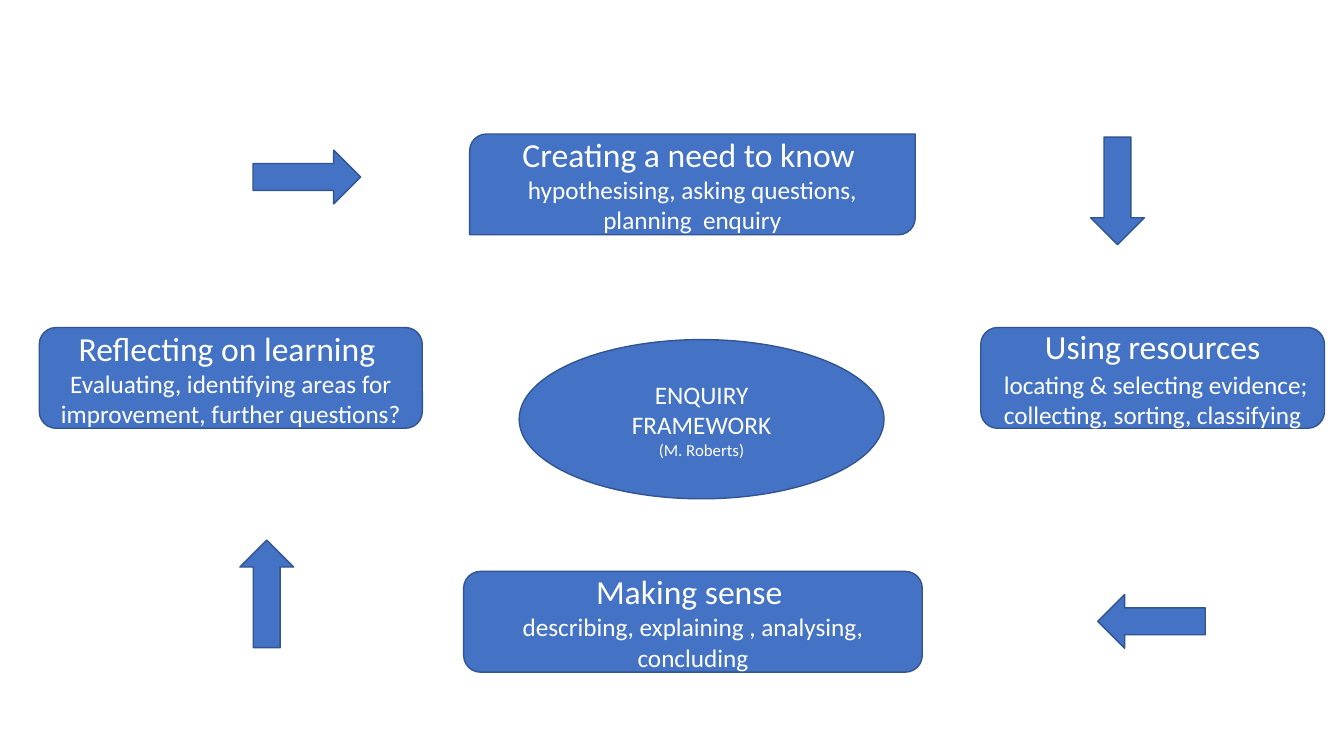
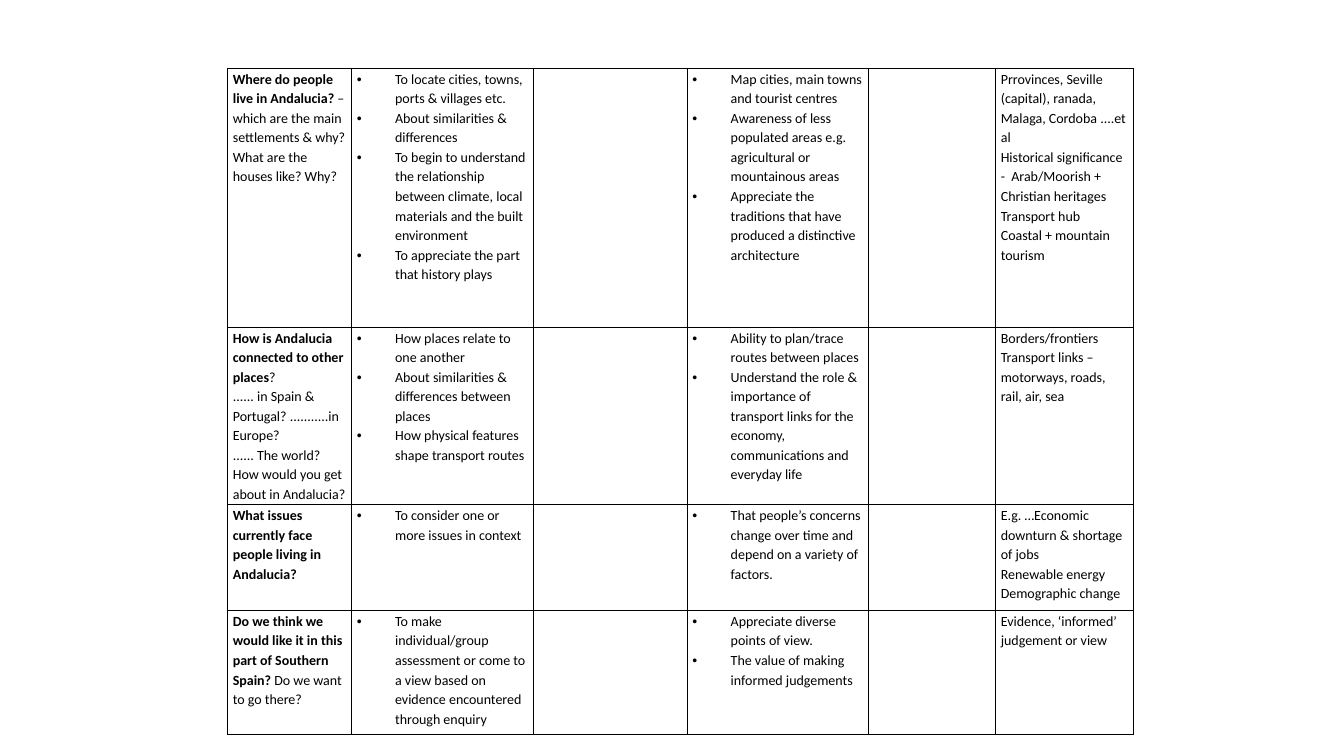
from dataclasses import dataclass
from itertools import product

from lxml.etree import SubElement
from pptx import Presentation
from pptx.dml.color import RGBColor
from pptx.enum.shapes import MSO_SHAPE
from pptx.enum.text import MSO_ANCHOR, PP_ALIGN
from pptx.oxml import parse_xml
from pptx.oxml.ns import nsdecls, qn
from pptx.util import Emu, Inches, Pt

COLOURS = {"fill": "4472C4", "outline": "325491", "light": "FFFFFF", "dark": "000000"}
FONT = "Calibri"
SLIDE_WIDTH, SLIDE_HEIGHT = Inches(13.33), Inches(7.5)
GRID_COLUMNS = 40
CELL = SLIDE_WIDTH / GRID_COLUMNS

BOX_ROWS = 3
ARROW_LENGTH, ARROW_BREADTH = 3.2, 1.6

TABLE_LEFT, TABLE_TOP = 6.78, 2.04
TABLE_COLUMNS = (3.69, 5.4, 4.59, 5.4, 3.78, 4.11)
TABLE_ROWS = (7.71, 5.28, 3.15, 3.69)
QUESTION, LEARNING, OUTCOME, CONTENT = 0, 1, 3, 5
TABLE_TEXT_SIZE = 10
BULLET_INDENT = Inches(0.38)


@dataclass(frozen=True)
class Span:
    text: str
    size: float
    bold: bool = False


Line = tuple[Span, ...]


@dataclass(frozen=True)
class Arrow:
    kind: MSO_SHAPE
    column: float
    row: float
    upright: bool


@dataclass(frozen=True)
class Stage:
    kind: MSO_SHAPE
    column: float
    row: float
    columns: float
    lines: tuple[Line, ...]
    rows: float = BOX_ROWS


@dataclass(frozen=True)
class Enquiry:
    question: str
    question_end: str
    question_more: tuple[str, ...]
    learning: tuple[str, ...]
    outcomes: tuple[str, ...]
    content: tuple[str, ...]


ARROWS = (
    Arrow(MSO_SHAPE.DOWN_ARROW, 32.46, 4.08, True),
    Arrow(MSO_SHAPE.RIGHT_ARROW, 7.53, 4.47, False),
    Arrow(MSO_SHAPE.LEFT_ARROW, 32.67, 17.7, False),
    Arrow(MSO_SHAPE.UP_ARROW, 7.14, 16.08, True),
)

STAGES = (
    Stage(MSO_SHAPE.ROUND_2_DIAG_RECTANGLE, 13.98, 3.99, 13.26, (
        (Span("Creating a need to know ", 24),),
        (Span("hypothesising, asking questions, planning  enquiry", 18),),
    )),
    Stage(MSO_SHAPE.ROUNDED_RECTANGLE, 29.19, 9.75, 10.23, (
        (Span("Using resources", 24),),
        (Span(" ", 20),
         Span("locating & selecting evidence; collecting, sorting, classifying", 18)),
    )),
    Stage(MSO_SHAPE.ROUNDED_RECTANGLE, 1.17, 9.75, 11.4, (
        (Span("Reflecting on learning ", 24),),
        (Span("Evaluating, identifying areas for improvement, further questions?", 18),),
    )),
    Stage(MSO_SHAPE.ROUNDED_RECTANGLE, 13.8, 17.01, 13.65, (
        (Span("Making sense ", 24),),
        (Span("describing, explaining , analysing, concluding", 18),),
    )),
    Stage(MSO_SHAPE.OVAL, 15.45, 10.11, 10.86, (
        (Span("ENQUIRY FRAMEWORK", 18),),
        (Span("(M. Roberts)", 12),),
    ), rows=4.74),
)

ENQUIRIES = (
    Enquiry(
        "Where do people live in Andalucia?",
        " – which are the main settlements & why?",
        ("What are the houses like? Why?",),
        ("To locate cities, towns, ports & villages etc.",
         "About similarities & differences",
         "To begin to understand the relationship between climate, local materials "
         "and the built environment",
         "To appreciate the part that history plays"),
        ("Map cities, main towns and tourist centres",
         "Awareness of less populated areas e.g. agricultural or mountainous areas",
         "Appreciate the traditions that have produced a distinctive architecture"),
        ("Prrovinces, Seville (capital), ranada, Malaga, Cordoba ....et al",
         "Historical significance -  Arab/Moorish + Christian heritages",
         "Transport hub",
         "Coastal + mountain tourism"),
    ),
    Enquiry(
        "How is Andalucia connected to other places",
        "?",
        ("...... in Spain & Portugal? ...........in Europe?",
         "...... The world?",
         "How would you get about in Andalucia?"),
        ("How places relate to one another",
         "About similarities & differences between places",
         "How physical features shape transport routes"),
        ("Ability to plan/trace routes between places",
         "Understand the role & importance of transport links for the economy, "
         "communications and everyday life"),
        ("Borders/frontiers",
         "Transport links – motorways, roads, rail, air, sea"),
    ),
    Enquiry(
        "What issues currently face people living in Andalucia?",
        "",
        (),
        ("To consider one or more issues in context",),
        ("That people’s concerns change over time and depend on a variety of factors.",),
        ("E.g. …Economic downturn & shortage of jobs",
         "Renewable energy",
         "Demographic change"),
    ),
    Enquiry(
        "Do we think we would like it in this part of Southern Spain?",
        " Do we want to go there?",
        (),
        ("To make individual/group assessment or come to a view based on evidence "
         "encountered through enquiry",),
        ("Appreciate diverse points of view.",
         "The value of making informed judgements"),
        ("Evidence, ‘informed’ judgement or view",),
    ),
)


def grid(cells: float) -> Emu:
    """Turn a number of grid cells into a length."""
    return Emu(round(cells * CELL))


def colour(name: str) -> RGBColor:
    return RGBColor.from_string(COLOURS[name])


def write_lines(text_frame, lines: tuple[Line, ...], text_colour: str) -> list:
    """Write one paragraph per line and return the paragraphs."""
    paragraphs = []
    for number, line in enumerate(lines):
        paragraph = text_frame.add_paragraph() if number else text_frame.paragraphs[0]
        for span in line:
            run = paragraph.add_run()
            run.text = span.text
            run.font.name = FONT
            run.font.size = Pt(span.size)
            run.font.bold = span.bold
            run.font.color.rgb = colour(text_colour)
        paragraphs.append(paragraph)
    return paragraphs


def add_figure(page, kind: MSO_SHAPE, column: float, row: float, columns: float, rows: float):
    """Add a shape in the fill and outline that all figures share."""
    figure = page.shapes.add_shape(kind, *map(grid, (column, row, columns, rows)))
    figure.shadow.inherit = False
    figure.fill.solid()
    figure.fill.fore_color.rgb = colour("fill")
    figure.line.color.rgb = colour("outline")
    figure.line.width = Pt(1)
    return figure


def add_arrow(page, arrow: Arrow) -> None:
    size = (ARROW_LENGTH, ARROW_BREADTH)
    columns, rows = reversed(size) if arrow.upright else size
    add_figure(page, arrow.kind, arrow.column, arrow.row, columns, rows)


def add_stage(page, stage: Stage) -> None:
    box = add_figure(page, stage.kind, stage.column, stage.row, stage.columns, stage.rows)
    box.text_frame.word_wrap = True
    box.text_frame.vertical_anchor = MSO_ANCHOR.MIDDLE
    for paragraph in write_lines(box.text_frame, stage.lines, "light"):
        paragraph.alignment = PP_ALIGN.CENTER


def add_bullet(paragraph) -> None:
    properties = paragraph._p.get_or_add_pPr()
    properties.set("marL", str(BULLET_INDENT))
    properties.set("indent", str(-BULLET_INDENT))
    SubElement(properties, qn("a:buFont")).set("typeface", "Arial")
    SubElement(properties, qn("a:buChar")).set("char", "•")


def style_cell(cell) -> None:
    """Clear the fill, set the margins and rule all four sides."""
    cell.fill.background()
    cell.margin_left = cell.margin_right = Inches(0.05)
    cell.margin_top = cell.margin_bottom = 0
    properties = cell._tc.get_or_add_tcPr()
    for position, side in enumerate(("lnL", "lnR", "lnT", "lnB")):
        properties.insert(position, parse_xml(
            f'<a:{side} {nsdecls("a")} w="{Pt(1)}"><a:solidFill>'
            f'<a:srgbClr val="{COLOURS["dark"]}"/></a:solidFill></a:{side}>'))


def fill_cell(cell, lines: tuple[Line, ...], bulleted: bool) -> None:
    for paragraph in write_lines(cell.text_frame, lines, "dark"):
        if bulleted:
            add_bullet(paragraph)
        paragraph.line_spacing = 1.15


def plain_lines(texts: tuple[str, ...]) -> tuple[Line, ...]:
    return tuple((Span(text, TABLE_TEXT_SIZE),) for text in texts)


def question_lines(enquiry: Enquiry) -> tuple[Line, ...]:
    """Set the key question in bold, with its plain ending on the same line."""
    opening = (Span(enquiry.question, TABLE_TEXT_SIZE, bold=True),)
    if enquiry.question_end:
        opening += (Span(enquiry.question_end, TABLE_TEXT_SIZE),)
    return (opening,) + plain_lines(enquiry.question_more)


def add_enquiry_table(page) -> None:
    frame = page.shapes.add_table(
        len(TABLE_ROWS), len(TABLE_COLUMNS), grid(TABLE_LEFT), grid(TABLE_TOP),
        grid(sum(TABLE_COLUMNS)), grid(sum(TABLE_ROWS)))
    table = frame.table
    table.first_row = table.horz_banding = False
    for column, width in zip(table.columns, TABLE_COLUMNS):
        column.width = grid(width)
    for row, height in zip(table.rows, TABLE_ROWS):
        row.height = grid(height)
    for row, column in product(range(len(TABLE_ROWS)), range(len(TABLE_COLUMNS))):
        style_cell(table.cell(row, column))
    for row, enquiry in enumerate(ENQUIRIES):
        fill_cell(table.cell(row, QUESTION), question_lines(enquiry), False)
        fill_cell(table.cell(row, LEARNING), plain_lines(enquiry.learning), True)
        fill_cell(table.cell(row, OUTCOME), plain_lines(enquiry.outcomes), True)
        fill_cell(table.cell(row, CONTENT), plain_lines(enquiry.content), False)


def main() -> None:
    deck = Presentation()
    deck.slide_width, deck.slide_height = SLIDE_WIDTH, SLIDE_HEIGHT
    blank = deck.slide_layouts[6]

    framework_page = deck.slides.add_slide(blank)
    for arrow in ARROWS:
        add_arrow(framework_page, arrow)
    for stage in STAGES:
        add_stage(framework_page, stage)

    add_enquiry_table(deck.slides.add_slide(blank))
    deck.save("out.pptx")


if __name__ == "__main__":
    main()
